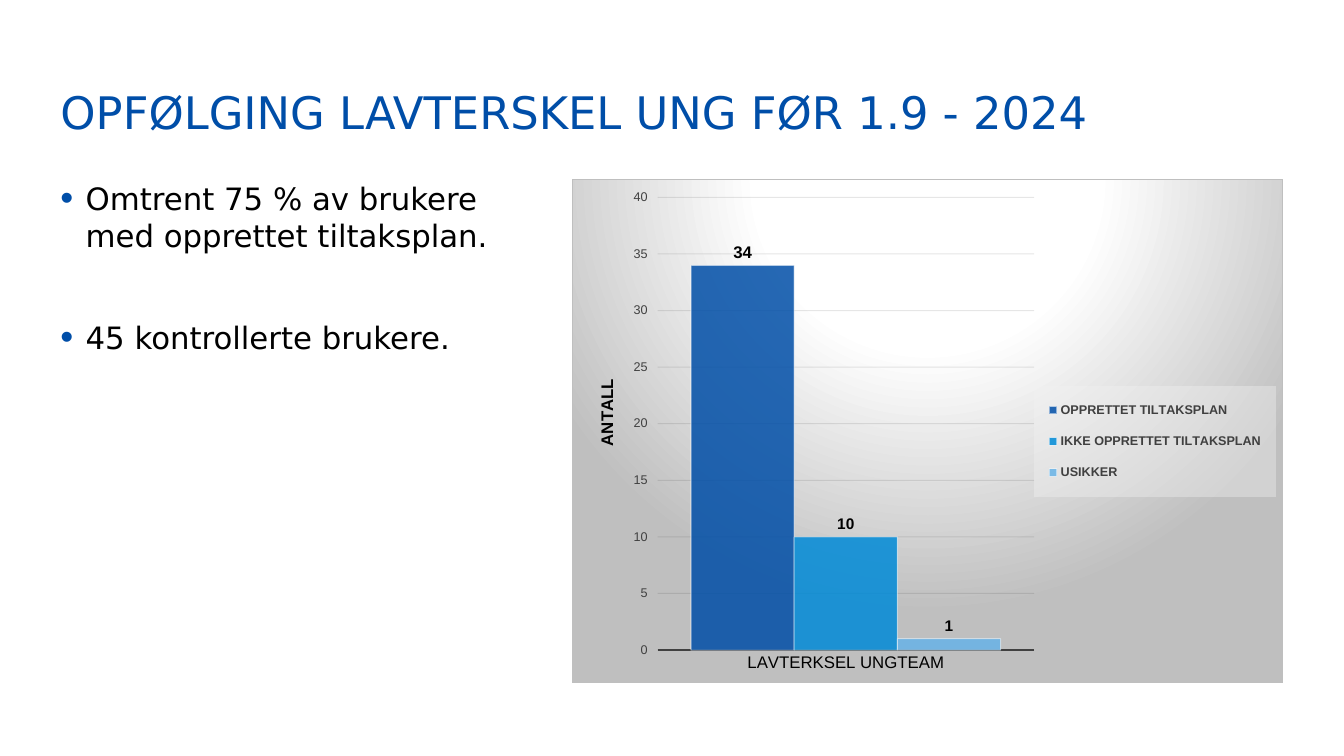
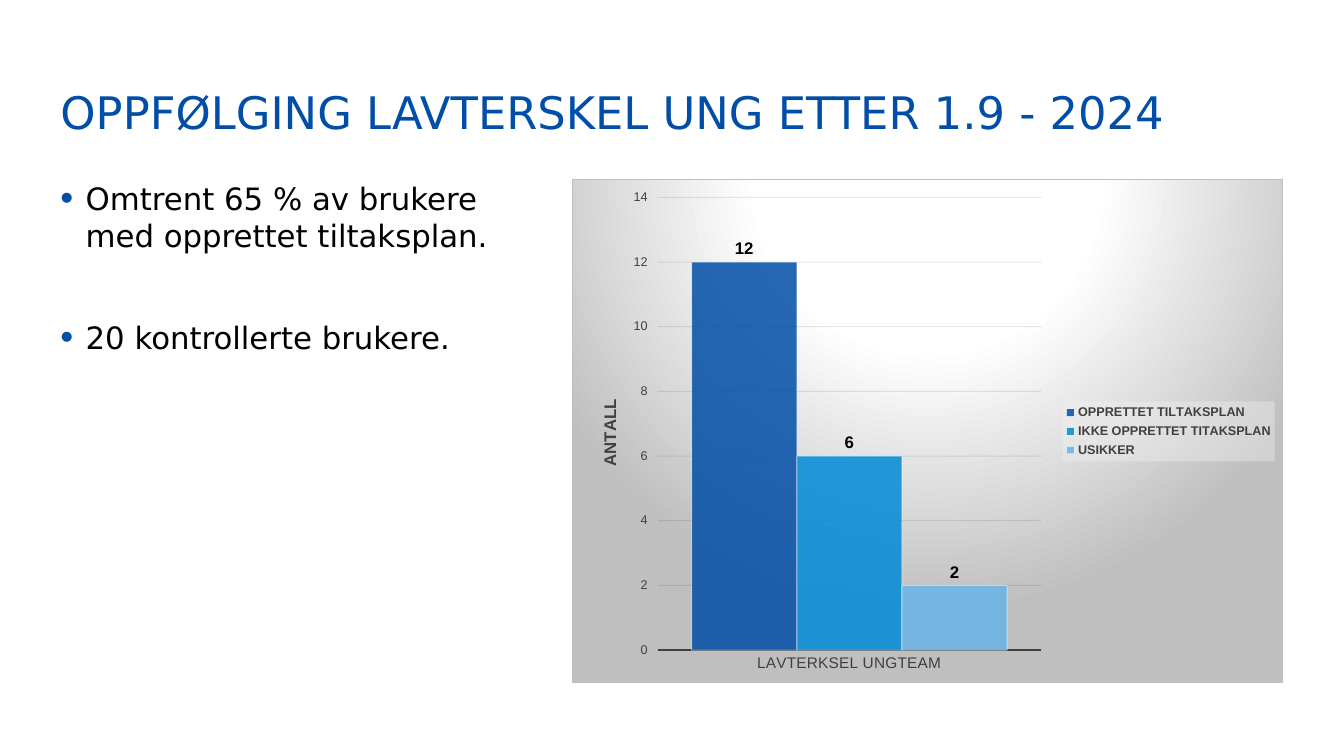
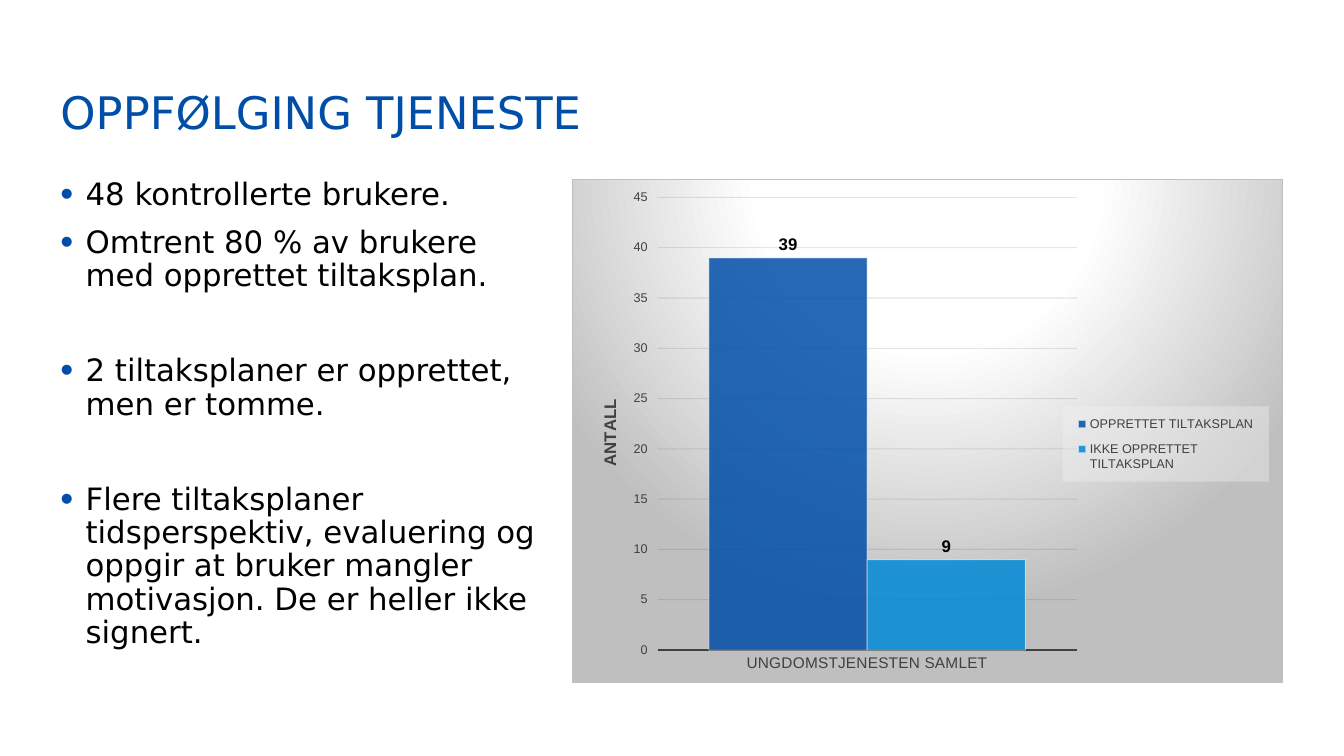
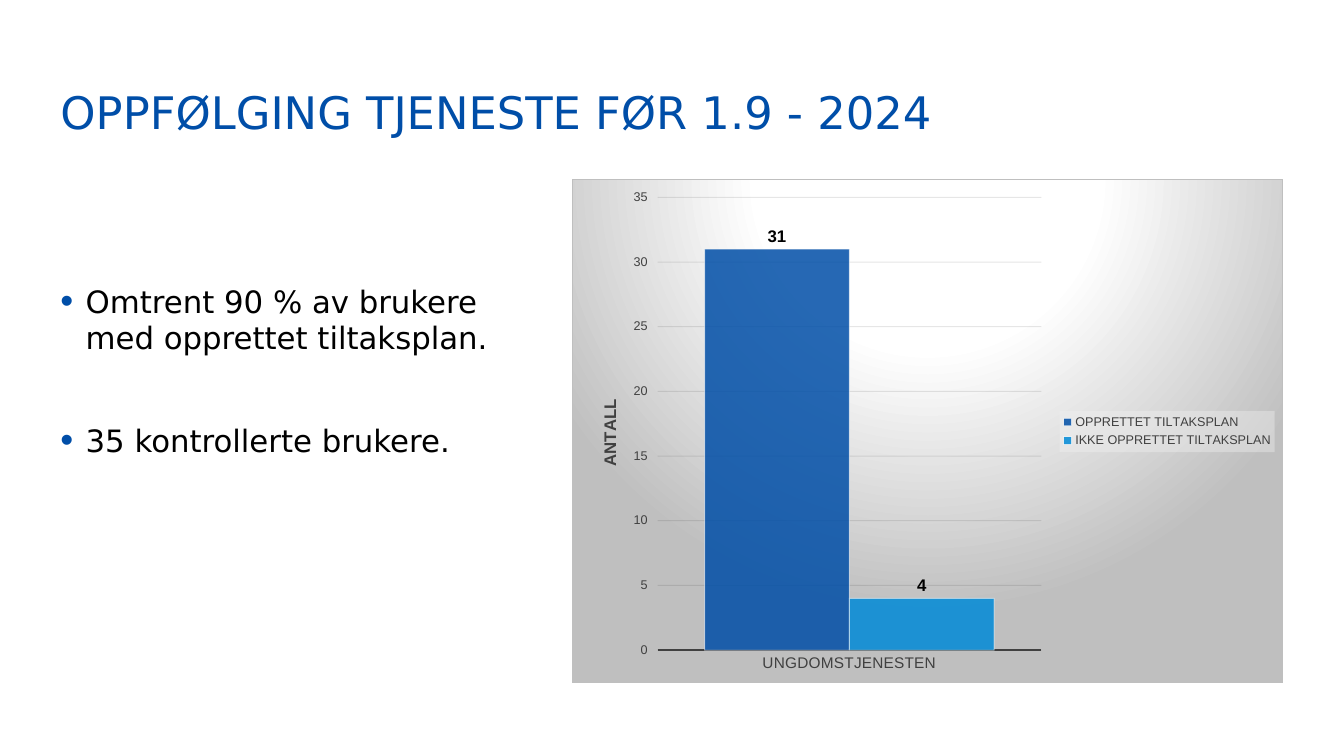
"""Build four slides on follow-up plans in the youth service."""
from lxml.etree import SubElement
from pptx import Presentation
from pptx.chart.data import CategoryChartData
from pptx.dml.color import RGBColor
from pptx.enum.chart import XL_CHART_TYPE, XL_LABEL_POSITION, XL_LEGEND_POSITION, XL_TICK_MARK
from pptx.enum.text import MSO_ANCHOR
from pptx.oxml import parse_xml
from pptx.oxml.ns import nsdecls, qn
from pptx.util import Inches, Pt

COLORS = {
    "heading": "004EA8",
    "text": "000000",
    "muted": "404040",
    "grid": "0D0D0D",
    "white": "FFFFFF",
    "edge": "BFBFBF",
    "legend": "F2F2F2",
    "created": "004EA7",
    "missing": "008AD7",
    "unsure": "68B3E7",
}
SERIES_COLORS = ("created", "missing", "unsure")
HEADING_FONT = "DejaVu Sans"
CHART_FONT = "Arial"
HEADING_BOX = (0.6, 0.32, 12.13, 1.06)
CHART_BOX = (5.67, 1.78, 7.06, 5)
POINTS_LEFT, POINTS_WIDTH, POINTS_BOTTOM = 0.6, 4.75, 6.78

SLIDES = [
    {
        "heading": "OPFØLGING LAVTERSKEL UNG FØR 1.9 - 2024",
        "points": ["Omtrent 75 % av brukere med opprettet tiltaksplan.", "45 kontrollerte brukere."],
        "gaps": [0, 46.5],
        "category": "LAVTERKSEL UNGTEAM",
        "values": {"OPPRETTET TILTAKSPLAN": 34, "IKKE OPPRETTET TILTAKSPLAN": 10, "USIKKER": 1},
        "chart": {
            "plot_width": 0.53,
            "legend_box": (0.65, 0.41, 0.34, 0.22),
            "legend_bold": True,
            "label_sizes": (12, 11, 11),
            "category_size": 12,
            "title_color": "text",
            "title_at": (0.03, 0.39),
        },
    },
    {
        "heading": "OPPFØLGING LAVTERSKEL UNG ETTER 1.9 - 2024",
        "points": ["Omtrent 65 % av brukere med opprettet tiltaksplan.", "20 kontrollerte brukere."],
        "gaps": [0, 46.5],
        "category": "LAVTERKSEL UNGTEAM",
        "values": {"OPPRETTET TILTAKSPLAN": 12, "IKKE OPPRETTET TITAKSPLAN": 6, "USIKKER": 2},
        "chart": {"plot_width": 0.54, "legend_bold": True},
    },
    {
        "heading": "OPPFØLGING TJENESTE",
        "points": [
            "48 kontrollerte brukere.",
            "Omtrent 80 % av brukere med opprettet tiltaksplan.",
            "2 tiltaksplaner er opprettet, men er tomme.",
            "Flere tiltaksplaner tidsperspektiv, evaluering og oppgir at bruker "
            "mangler motivasjon. De er heller ikke signert.",
        ],
        "gaps": [0, 10, 44.3, 44.3],
        "line_spacing": 0.9,
        "category": "UNGDOMSTJENESTEN SAMLET",
        "values": {"OPPRETTET TILTAKSPLAN": 39, "IKKE OPPRETTET TILTAKSPLAN": 9},
        "chart": {"plot_width": 0.59, "legend_box": (0.69, 0.45, 0.29, 0.15)},
    },
    {
        "heading": "OPPFØLGING TJENESTE FØR 1.9 - 2024",
        "points": ["Omtrent 90 % av brukere med opprettet tiltaksplan.", "35 kontrollerte brukere."],
        "gaps": [0, 46.5],
        "points_top": 2.8,
        "category": "UNGDOMSTJENESTEN",
        "values": {"OPPRETTET TILTAKSPLAN": 31, "IKKE OPPRETTET TILTAKSPLAN": 4},
        "chart": {"plot_width": 0.54},
    },
]


def rgb(name):
    return RGBColor.from_string(COLORS[name])


def set_font(font, size, color, bold=False, name=CHART_FONT):
    font.name, font.size, font.bold = name, Pt(size), bold
    font.color.rgb = rgb(color)


def add_bullet(paragraph):
    properties = paragraph._p.get_or_add_pPr()
    properties.set("marL", str(Inches(0.25)))
    properties.set("indent", str(-Inches(0.25)))
    tint = SubElement(properties, qn("a:buClr"))
    SubElement(tint, qn("a:srgbClr"), val=COLORS["heading"])
    SubElement(properties, qn("a:buSzPct"), val="120000")
    SubElement(properties, qn("a:buFont"), typeface=CHART_FONT)
    SubElement(properties, qn("a:buChar"), char="•")


def add_text(slide, lines, box, size=22, color="text", anchor=MSO_ANCHOR.TOP,
             bullets=False, gaps=(0,), line_spacing=None):
    frame = slide.shapes.add_textbox(*map(Inches, box)).text_frame
    frame.word_wrap = True
    frame.vertical_anchor = anchor
    frame.margin_left = frame.margin_top = frame.margin_right = frame.margin_bottom = 0
    for index, (line, gap) in enumerate(zip(lines, gaps)):
        paragraph = frame.add_paragraph() if index else frame.paragraphs[0]
        if bullets:
            add_bullet(paragraph)
        if gap:
            paragraph.space_before = Pt(gap)
        if line_spacing:
            paragraph.line_spacing = line_spacing
        run = paragraph.add_run()
        run.text = line
        set_font(run.font, size, color, name=HEADING_FONT)


def fade(element, *percents):
    for tint, percent in zip(element.iter(qn("a:srgbClr")), percents):
        SubElement(tint, qn("a:alpha"), val=str(percent * 1000))


def place(parent, index, fractions, inner=False):
    """Give a chart part a manual layout in fractions of the chart."""
    target = '<c:layoutTarget val="inner"/>' if inner else ""
    modes = "".join(f'<c:{axis}Mode val="edge"/>' for axis in "xy")
    sides = "".join(f'<c:{side} val="{part}"/>' for side, part in zip("xywh", fractions))
    layout = parse_xml(f'<c:layout {nsdecls("c")}><c:manualLayout>{target}{modes}{sides}'
                       "</c:manualLayout></c:layout>")
    present = parent.find(qn("c:layout"))
    if present is not None:
        parent.remove(present)
    parent.insert(index, layout)


def fill_background(chart):
    stops = "".join(
        f'<a:gs pos="{position * 1000}"><a:srgbClr val="{COLORS[color]}"/></a:gs>'
        for position, color in ((0, "white"), (39, "white"), (100, "edge")))
    background = parse_xml(
        f'<c:spPr {nsdecls("c", "a")}><a:gradFill><a:gsLst>{stops}</a:gsLst>'
        '<a:path path="circle"><a:fillToRect l="50000" t="-80000" r="50000" b="180000"/></a:path>'
        f'</a:gradFill><a:ln w="{Pt(0.75)}"><a:solidFill><a:srgbClr val="{COLORS["edge"]}"/>'
        "</a:solidFill></a:ln></c:spPr>")
    chart._chartSpace.find(qn("c:chart")).addnext(background)


def style_axes(chart, category_size, category_color, title_color, title_at):
    categories, counts = chart.category_axis, chart.value_axis
    categories.major_tick_mark = XL_TICK_MARK.NONE
    categories.format.line.width = Pt(1.5)
    categories.format.line.color.rgb = rgb("muted")
    set_font(categories.tick_labels.font, category_size, category_color)
    counts.minimum_scale = 0
    counts.major_tick_mark = XL_TICK_MARK.OUTSIDE
    counts.format.line.fill.background()
    set_font(counts.tick_labels.font, 9, "muted")
    grid = counts.major_gridlines.format.line
    grid.width = Pt(0.75)
    grid.color.rgb = rgb("grid")
    fade(counts._element.find(qn("c:majorGridlines")), 10)
    title = counts.axis_title
    run = title.text_frame.paragraphs[0].add_run()
    run.text = "ANTALL"
    set_font(run.font, 12, title_color, bold=True)
    direction = title._element.find(".//" + qn("a:bodyPr"))
    direction.set("rot", "-5400000")
    direction.set("vert", "horz")
    place(title._element, 1, title_at)


def style_series(chart, label_sizes):
    plot = chart.plots[0]
    plot.gap_width, plot.overlap, plot.vary_by_categories = 65, 0, False
    for series, color, size in zip(plot.series, SERIES_COLORS, label_sizes):
        series.format.fill.solid()
        series.format.fill.fore_color.rgb = rgb(color)
        series.format.line.width = Pt(0.75)
        series.format.line.color.rgb = rgb("white")
        fade(series._element.find(qn("c:spPr")), 85, 50)
        labels = series.data_labels
        labels.show_value = True
        labels.position = XL_LABEL_POSITION.OUTSIDE_END
        set_font(labels.font, size, "text", bold=True)


def style_legend(chart, bold, box):
    chart.has_legend = True
    legend = chart.legend
    legend.position = XL_LEGEND_POSITION.RIGHT
    legend.include_in_layout = False
    set_font(legend.font, 9, "muted", bold=bold)
    panel = parse_xml(f'<c:spPr {nsdecls("c", "a")}><a:solidFill>'
                      f'<a:srgbClr val="{COLORS["legend"]}"/></a:solidFill></c:spPr>')
    fade(panel, 39)
    legend._element.find(qn("c:txPr")).addprevious(panel)
    if box:
        place(legend._element, 1, box)


def add_column_chart(slide, category, values, plot_width, legend_box=None, legend_bold=False,
                     label_sizes=(12, 12, 12), category_size=11, title_color="muted",
                     title_at=(0.034, 0.43)):
    data = CategoryChartData()
    data.categories = [category]
    for name, count in values.items():
        data.add_series(name, [count])
    chart = slide.shapes.add_chart(
        XL_CHART_TYPE.COLUMN_CLUSTERED, *map(Inches, CHART_BOX), data).chart
    chart.has_title = False
    set_font(chart.font, 10, "text")
    fill_background(chart)
    style_axes(chart, category_size, title_color, title_color, title_at)
    style_series(chart, label_sizes)
    style_legend(chart, legend_bold, legend_box)
    plot_area = chart._chartSpace.find(".//" + qn("c:plotArea"))
    place(plot_area, 0, (0.12, 0.035, plot_width, 0.9), inner=True)


def main():
    deck = Presentation()
    deck.slide_width, deck.slide_height = Inches(13.33), Inches(7.5)
    for content in SLIDES:
        slide = deck.slides.add_slide(deck.slide_layouts[6])
        add_text(slide, [content["heading"]], HEADING_BOX, size=32, color="heading",
                 anchor=MSO_ANCHOR.BOTTOM, line_spacing=0.9)
        top = content.get("points_top", 1.78)
        add_text(slide, content["points"], (POINTS_LEFT, top, POINTS_WIDTH, POINTS_BOTTOM - top),
                 bullets=True, gaps=content["gaps"], line_spacing=content.get("line_spacing"))
        add_column_chart(slide, content["category"], content["values"], **content["chart"])
    deck.save("out.pptx")


if __name__ == "__main__":
    main()
